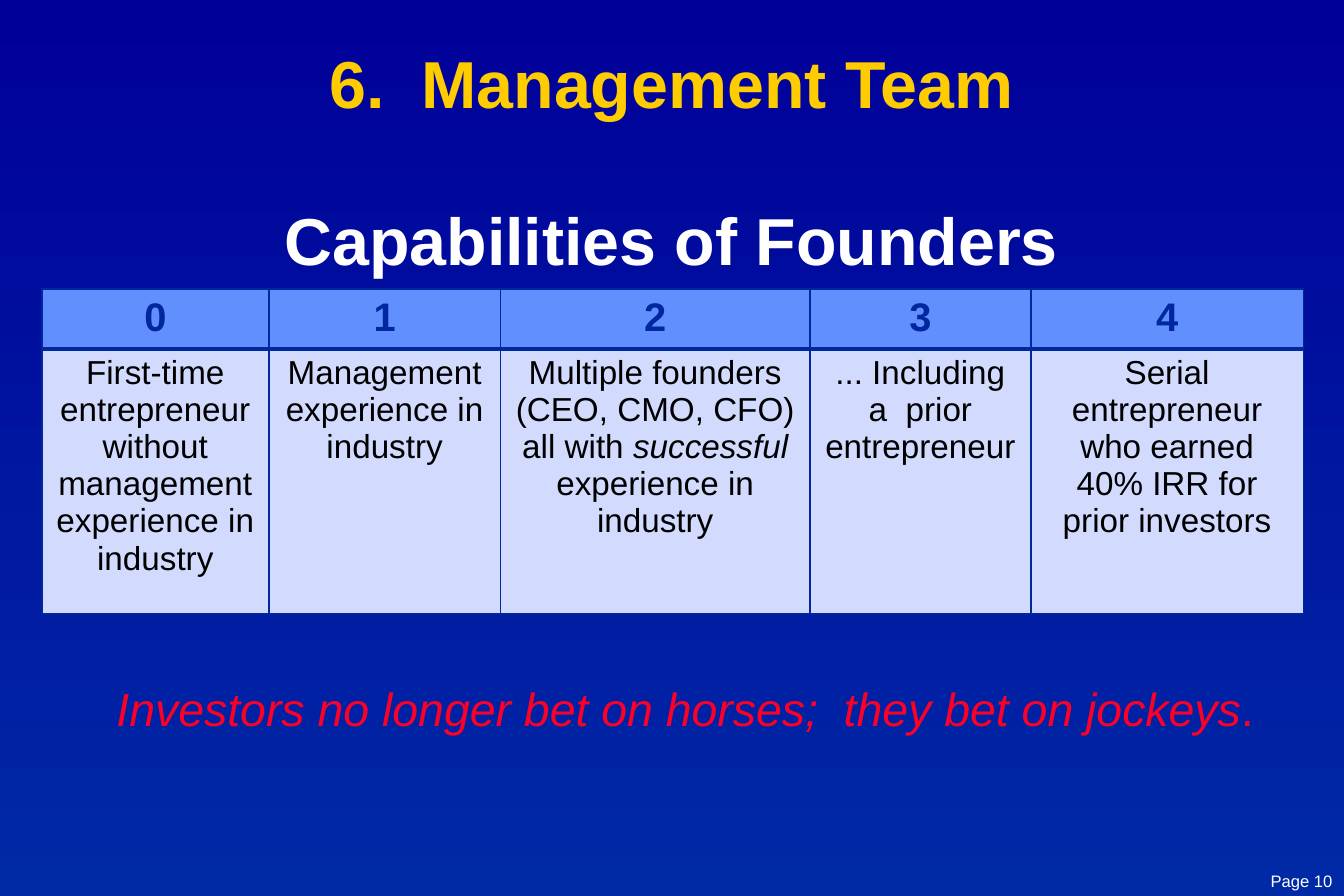
from lxml.etree import SubElement
from pptx import Presentation
from pptx.dml.color import RGBColor
from pptx.enum.text import PP_ALIGN
from pptx.oxml.ns import qn
from pptx.util import Inches, Pt

NIGHT = RGBColor(0x00, 0x00, 0x99)
OCEAN = RGBColor(0x00, 0x29, 0xA6)
GOLD = RGBColor(0xFF, 0xCC, 0x00)
WHITE = RGBColor(0xFF, 0xFF, 0xFF)
BLACK = RGBColor(0x00, 0x00, 0x00)
RED = RGBColor(0xFC, 0x01, 0x28)
NAVY = RGBColor(0x00, 0x27, 0x9F)
HEADER_BLUE = RGBColor(0x61, 0x8F, 0xFD)
PALE_BLUE = RGBColor(0xD2, 0xDB, 0xFE)

COLUMN_WIDTHS = [1.9, 1.94, 2.59, 1.85, 2.28]
ROW_HEIGHTS = [0.47, 2.22]
SCORES = ["0", "1", "2", "3", "4"]
CAPABILITIES = [
    "First-time entrepreneur without management experience in industry",
    "Management experience in industry",
    "Multiple founders (CEO, CMO, CFO) all with *successful* experience in industry",
    "... Including a  prior entrepreneur",
    "Serial entrepreneur who earned 40% IRR for prior investors",
]


class SlideBuilder:
    """Draw styled elements on one slide; asterisks in text mark italics."""

    def __init__(self, slide, font_name):
        self.slide = slide
        self.font_name = font_name

    def background(self, top_color, bottom_color):
        fill = self.slide.background.fill
        fill.gradient()
        fill.gradient_angle = 270
        for stop, color, position in zip(fill.gradient_stops, (top_color, bottom_color), (0, 1)):
            stop.color.rgb = color
            stop.position = position

    def add_text(self, para, text, size, color, bold=False, align=PP_ALIGN.CENTER):
        para.alignment = align
        for index, part in enumerate(text.split("*")):
            if not part:
                continue
            span = para.add_run()
            span.text = part
            span.font.name = self.font_name
            span.font.size = Pt(size)
            span.font.bold = bold
            span.font.italic = index % 2 == 1
            span.font.color.rgb = color

    def text_box(self, left, top, width, height, inset=True):
        box = self.slide.shapes.add_textbox(
            Inches(left), Inches(top), Inches(width), Inches(height))
        frame = box.text_frame
        frame.word_wrap = True
        if not inset:
            frame.margin_left = frame.margin_right = 0
            frame.margin_top = frame.margin_bottom = 0
        return frame

    def borders(self, cell, color, widths):
        properties = cell._tc.get_or_add_tcPr()
        for side, width in zip("LRTB", widths):
            line = SubElement(properties, qn(f"a:ln{side}"), w=str(Pt(width)))
            solid = SubElement(line, qn("a:solidFill"))
            SubElement(solid, qn("a:srgbClr"), val=str(color))

    def table(self, left, top, widths, heights):
        table = self.slide.shapes.add_table(
            len(heights), len(widths), Inches(left), Inches(top),
            Inches(sum(widths)), Inches(sum(heights))).table
        for column, width in zip(table.columns, widths):
            column.width = Inches(width)
        for row, height in zip(table.rows, heights):
            row.height = Inches(height)
        return table

    def table_row(self, row, texts, size, color, bold, fill, border_widths):
        for cell, text in zip(row.cells, texts):
            self.borders(cell, NAVY, border_widths)
            cell.fill.solid()
            cell.fill.fore_color.rgb = fill
            self.add_text(cell.text_frame.paragraphs[0], text, size, color, bold)


def main():
    deck = Presentation()
    deck.slide_width = Inches(11.25)
    deck.slide_height = Inches(7.5)
    page = SlideBuilder(deck.slides.add_slide(deck.slide_layouts[6]), "Arial")
    page.background(NIGHT, OCEAN)

    title = page.text_box(0.56, 0.35, 10.12, 1.92, inset=False)
    page.add_text(title.paragraphs[0], "6.  Management Team", 40, GOLD, bold=True)
    subtitle = title.add_paragraph()
    subtitle.space_before = Pt(47)
    page.add_text(subtitle, "Capabilities of Founders", 40, WHITE, bold=True)

    quote = page.text_box(0.4, 5.69, 10.67, 1.19, inset=False)
    page.add_text(quote.paragraphs[0],
                  "*Investors no longer bet on horses;  they bet on jockeys*.", 28, RED)

    number = page.text_box(10.07, 7.24, 1.18, 0.26)
    page.add_text(number.paragraphs[0], "Page 10", 10, WHITE, align=PP_ALIGN.RIGHT)

    table = page.table(0.35, 2.42, COLUMN_WIDTHS, ROW_HEIGHTS)
    page.table_row(table.rows[0], SCORES, 24, NAVY, True, HEADER_BLUE, (1, 1, 1, 3))
    page.table_row(table.rows[1], CAPABILITIES, 20, BLACK, False, PALE_BLUE, (1, 1, 3, 1))

    deck.save("out.pptx")


if __name__ == "__main__":
    main()
